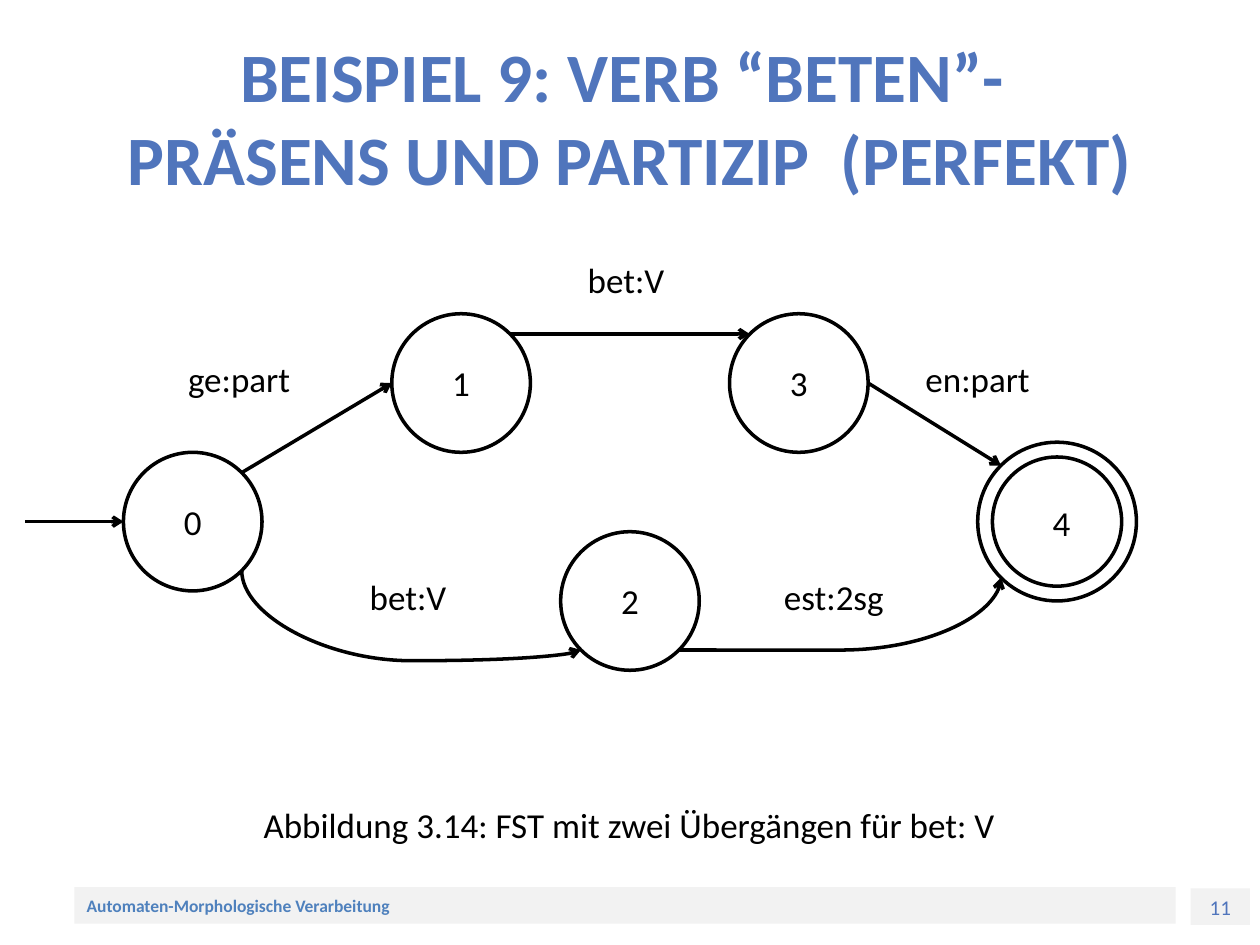
from math import cos, radians, sin

from lxml.etree import SubElement
from pptx import Presentation
from pptx.dml.color import RGBColor
from pptx.enum.shapes import MSO_CONNECTOR as LINK, MSO_SHAPE as SHAPE
from pptx.enum.text import MSO_ANCHOR as ANCHOR, PP_ALIGN as ALIGN
from pptx.oxml.ns import qn
from pptx.util import Inches, Pt

BLACK, WHITE, GREY, BLUE = "000000", "FFFFFF", "F2F2F2", "5075BC"


def color(value):
    return RGBColor.from_string(value)


def write(box, text, size=20, ink=BLACK, bold=False, align=ALIGN.CENTER, anchor=ANCHOR.MIDDLE):
    frame = box.text_frame
    frame.word_wrap = True
    frame.vertical_anchor = anchor
    frame.text = text
    para = frame.paragraphs[0]
    para.alignment = align
    formats = {"name": "Calibri", "size": Pt(size), "bold": bold}
    for span in para.runs:
        for name, value in formats.items():
            setattr(span.font, name, value)
        span.font.color.rgb = color(ink)


deck = Presentation()
deck.slide_width, deck.slide_height = Inches(10), Inches(7.5)
page = deck.slides.add_slide(deck.slide_layouts[5])
shapes = page.shapes

title = shapes.title
title.left, title.top, title.width, title.height = map(Inches, (0.5, 0.3, 9, 1.25))
write(title, "BEISPIEL 9: VERB “BETEN”- \vPRÄSENS UND PARTIZIP  (PERFEKT)", 39.6, BLUE, True)

footers = [
    ((9.45, 7.05, 0.47, 0.29), ("11", 12, BLUE, False, ALIGN.CENTER, ANCHOR.TOP)),
    ((0.59, 7.04, 8.74, 0.29),
     ("Automaten-Morphologische Verarbeitung", 10, "4F81BD", True, ALIGN.LEFT)),
]
for place, content in footers:
    bar = shapes.add_shape(SHAPE.RECTANGLE, *map(Inches, place))
    bar.shadow.inherit = False
    bar.fill.solid()
    bar.fill.fore_color.rgb = color(GREY)
    bar.line.fill.background()
    write(bar, *content)

states = {
    "0": (1.53, 4.14, 0.55),
    "2": (5.0, 4.77, 0.55),
    "3": (6.34, 3.04, 0.55),
    "1": (3.66, 3.04, 0.55),
    "4": (8.39, 4.14, 0.63),
}
circles = {}
for name, (x, y, radius) in states.items():
    final = name == "4"
    circle = shapes.add_shape(
        SHAPE.DONUT if final else SHAPE.OVAL,
        Inches(x - radius), Inches(y - radius), Inches(2 * radius), Inches(2 * radius))
    circle.shadow.inherit = False
    circle.fill.solid()
    circle.fill.fore_color.rgb = color(WHITE)
    circle.line.color.rgb = color(BLACK)
    circle.line.width = Pt(2)
    if final:
        circle.adjustments[0] = 0.093
    else:
        write(circle, name)
    circles[name] = circle

# Connection sites run counterclockwise from the top in steps of 45 degrees.
transitions = [
    (None, None, "0", 2, None),
    ("1", 7, "3", 1, None),
    ("0", 7, "1", 2, None),
    ("3", 6, "4", 1, None),
    ("0", 5, "2", 3, (270, {"flipH": "1"}, 113600)),
    ("2", 5, "4", 3, (90, {"flipH": "1", "flipV": "1"}, -100)),
]
for start, start_site, end, end_site, curve in transitions:
    points = []
    for name, site in ((start, start_site), (end, end_site)):
        if name is None:
            points.append((0.2, 4.14))
            continue
        x, y, radius = states[name]
        angle = radians(90 + 45 * site)
        points.append((x + radius * cos(angle), y - radius * sin(angle)))
    (x1, y1), (x2, y2) = points
    if curve:
        middle_x, middle_y = (x1 + x2) / 2, (y1 + y2) / 2
        half_width, half_height = abs(y2 - y1) / 2, abs(x2 - x1) / 2
        x1, x2 = middle_x - half_width, middle_x + half_width
        y1, y2 = middle_y - half_height, middle_y + half_height
    arrow = shapes.add_connector(
        LINK.CURVE if curve else LINK.STRAIGHT, *map(Inches, (x1, y1, x2, y2)))
    arrow.line.color.rgb = color(BLACK)
    arrow.line.width = Pt(2)
    properties = arrow.element.spPr
    SubElement(properties.find(qn("a:ln")), qn("a:tailEnd"), type="arrow")
    SubElement(properties, qn("a:effectLst"))
    joints = arrow.element.find(qn("p:nvCxnSpPr")).find(qn("p:cNvCxnSpPr"))
    for tag, name, site in (("a:stCxn", start, start_site), ("a:endCxn", end, end_site)):
        if name is not None:
            SubElement(joints, qn(tag), id=str(circles[name].shape_id), idx=str(site))
    if curve:
        turn, flips, bend = curve
        frame = properties.find(qn("a:xfrm"))
        frame.set("rot", str(turn * 60000))
        for name, value in flips.items():
            frame.set(name, value)
        geometry = properties.find(qn("a:prstGeom"))
        guides = geometry.find(qn("a:avLst"))
        SubElement(guides, qn("a:gd"), name="adj1", fmla=f"val {bend}")

labels = [
    ("4", 8.07, 3.83, 0.71, 0.63),
    ("Abbildung 3.14: FST mit zwei Übergängen für bet: V", 0.98, 6.27, 8.03, 0.55),
    ("ge:part ", 1.3, 2.81, 1.26, 0.39),
    ("bet:V ", 2.64, 4.54, 1.26, 0.39),
    ("est:2sg ", 6.02, 4.54, 1.26, 0.39),
    ("en:part", 7.13, 2.81, 1.26, 0.39),
    ("bet:V ", 4.37, 2.02, 1.26, 0.39),
]
for text, *place in labels:
    write(shapes.add_textbox(*map(Inches, place)), text)

deck.save("out.pptx")
